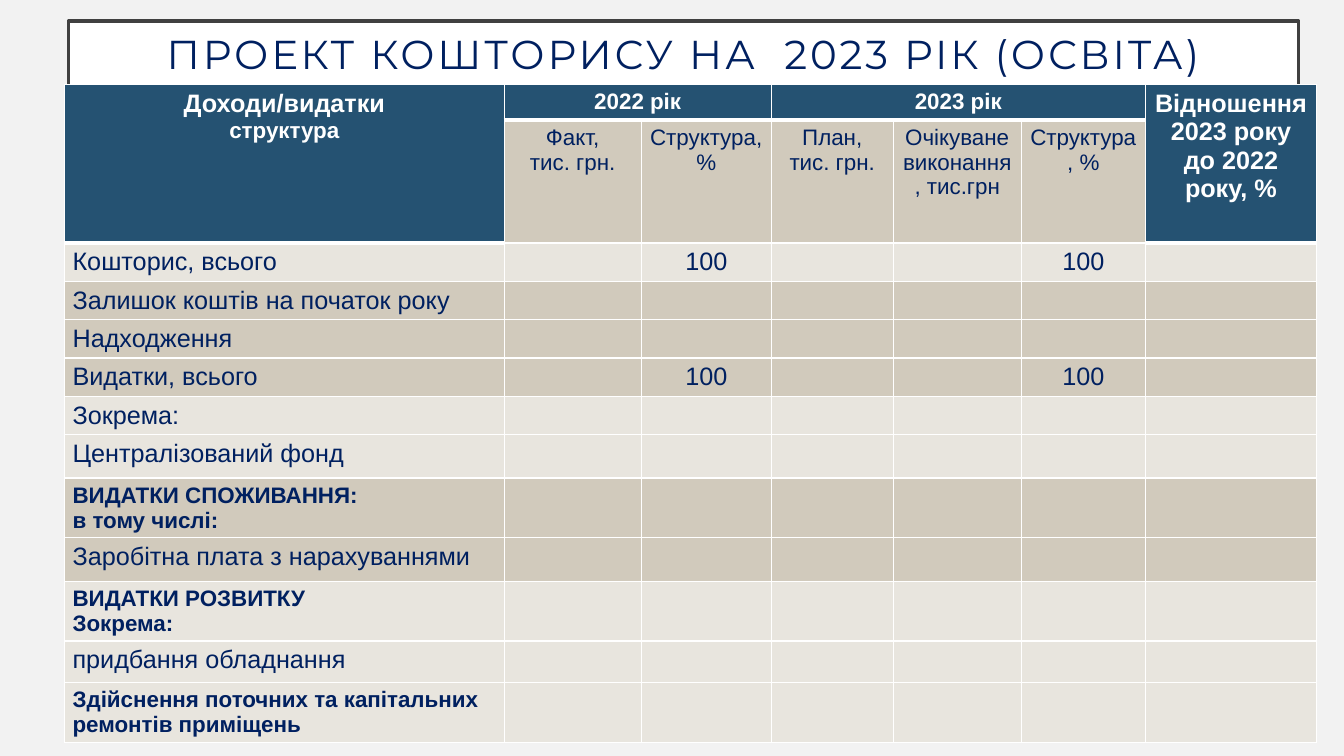
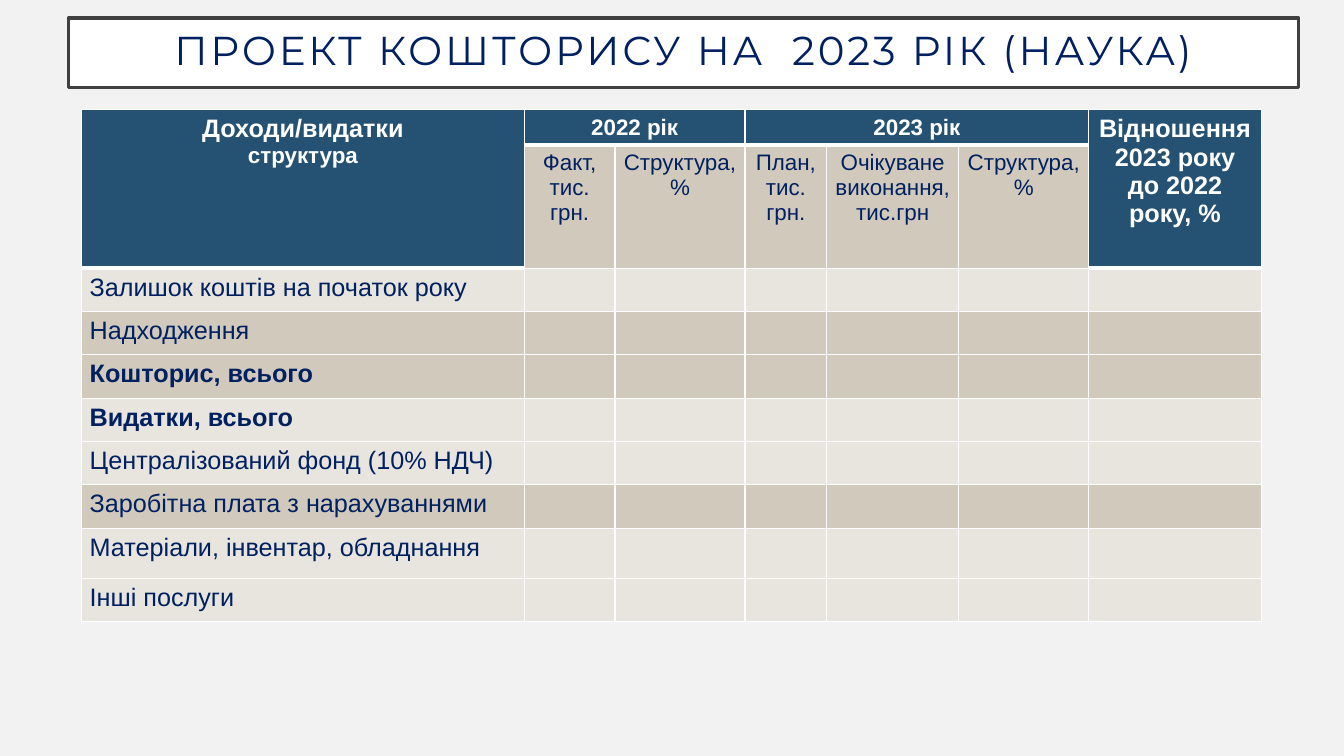
from lxml.etree import SubElement
from pptx import Presentation
from pptx.dml.color import RGBColor
from pptx.enum.text import MSO_ANCHOR, MSO_AUTO_SIZE, PP_ALIGN
from pptx.oxml.ns import qn
from pptx.util import Inches, Pt

# Shared colours and fonts
BACKGROUND = "F2F2F2"
WHITE = "FFFFFF"
FRAME = "404040"
NAVY = "002060"
HEADER = "255272"
DARK = "D1CABC"
LIGHT = "E8E5DE"
TITLE_FONT = "Montserrat"
TABLE_FONT = "Arial"

# Header wording: (row, column, last row, last column, text)
TOP_HEADINGS = [
    (0, 0, 1, 0, "Доходи/видатки\nструктура"),
    (0, 1, 0, 2, "2022 рік"),
    (0, 3, 0, 5, "2023 рік"),
    (0, 6, 1, 6, "Відношення 2023 року до 2022 року, %"),
]
HEADER_HEIGHTS = [0.35, 1.21]
LAST_COLUMN = 6

# Body rows: (label, height, fill, bold, size, share in percent)
EDUCATION_ROWS = [
    ("Кошторис, всього", 0.38, LIGHT, False, 18, "100"),
    ("Залишок коштів на початок року", 0.38, DARK, False, 18, ""),
    ("Надходження", 0.38, DARK, False, 18, ""),
    ("Видатки, всього", 0.38, DARK, False, 18, "100"),
    ("Зокрема:", 0.38, LIGHT, False, 18, ""),
    ("Централізований фонд", 0.43, LIGHT, False, 18, ""),
    ("ВИДАТКИ СПОЖИВАННЯ:\nв тому числі:", 0.59, DARK, True, 16, ""),
    ("Заробітна плата з нарахуваннями", 0.43, DARK, False, 18, ""),
    ("ВИДАТКИ РОЗВИТКУ\nЗокрема:", 0.59, LIGHT, True, 16, ""),
    ("придбання обладнання", 0.41, LIGHT, False, 18, ""),
    ("Здійснення поточних та капітальних ремонтів приміщень",
     0.6, LIGHT, True, 16, ""),
]
SCIENCE_ROWS = [
    ("Залишок коштів на початок року", 0.43, LIGHT, False, 18, ""),
    ("Надходження", 0.43, DARK, False, 18, ""),
    ("Кошторис, всього", 0.43, DARK, True, 18, ""),
    ("Видатки, всього", 0.43, LIGHT, True, 18, ""),
    ("Централізований фонд (10% НДЧ)", 0.43, LIGHT, False, 18, ""),
    ("Заробітна плата з нарахуваннями", 0.43, DARK, False, 18, ""),
    ("Матеріали, інвентар, обладнання", 0.5, LIGHT, False, 18, ""),
    ("Інші послуги", 0.43, LIGHT, False, 18, ""),
]


def color(hex_value):
    return RGBColor.from_string(hex_value)


def set_fill(target, hex_value):
    target.fill.solid()
    target.fill.fore_color.rgb = color(hex_value)


def set_font(font, name, size, hex_value, bold=False):
    font.name = name
    font.size = Pt(size)
    font.bold = bold
    font.color.rgb = color(hex_value)


def add_title(slide, text, top):
    """Place the framed title band."""
    title = slide.shapes.title
    title.left, title.top = Inches(0.68), Inches(top)
    title.width, title.height = Inches(12.2), Inches(0.69)
    set_fill(title, WHITE)
    title.line.color.rgb = color(FRAME)
    title.line.width = Pt(2.5)
    frame = title.text_frame
    frame.text = text
    frame.word_wrap = True
    frame.auto_size = MSO_AUTO_SIZE.NONE
    frame.vertical_anchor = MSO_ANCHOR.MIDDLE
    frame.margin_left = frame.margin_right = Inches(0.2)
    frame.margin_top = frame.margin_bottom = Inches(0.2)
    paragraph = frame.paragraphs[0]
    paragraph.alignment = PP_ALIGN.CENTER
    paragraph.line_spacing = 0.9
    set_font(paragraph.font, TITLE_FONT, 28.8, NAVY)
    paragraph.runs[0].font.size = Pt(28.8)
    # Letter spacing of two points
    paragraph.runs[0]._r.get_or_add_rPr().set("spc", "200")


def rule_below(row, column):
    """Width in points of the rule under a cell: thick under headings."""
    under_heading = row == 0 or (row == 1 and column in (0, LAST_COLUMN))
    return 3 if under_heading else 1


def set_borders(cell, row, column):
    properties = cell._tc.get_or_add_tcPr()
    top = rule_below(row - 1, column) if row else 1
    widths = {"lnL": 1, "lnR": 1, "lnT": top, "lnB": rule_below(row, column)}
    for side, width in widths.items():
        line = SubElement(properties, qn(f"a:{side}"), w=str(Pt(width)))
        solid = SubElement(line, qn("a:solidFill"))
        SubElement(solid, qn("a:srgbClr"), val=WHITE)


def write_cell(cell, text, size, hex_value=NAVY, bold=False, centred=True):
    cell.text_frame.text = text
    for paragraph in cell.text_frame.paragraphs:
        paragraph.alignment = PP_ALIGN.CENTER if centred else PP_ALIGN.LEFT
        set_font(paragraph.font, TABLE_FONT, size, hex_value, bold)


def format_cells(table, body_rows):
    """Give every cell its borders, fill and margins."""
    for row, table_row in enumerate(table.rows):
        for column, cell in enumerate(table_row.cells):
            set_borders(cell, row, column)
            if row >= 2:
                fill = body_rows[row - 2][2]
            elif row == 0 or column in (0, LAST_COLUMN):
                fill = HEADER
            else:
                fill = DARK
            set_fill(cell, fill)
            cell.margin_left = cell.margin_right = Inches(0.08)


def write_header(table, subheadings):
    for row, column, last_row, last_column, text in TOP_HEADINGS:
        cell = table.cell(row, column)
        cell.merge(table.cell(last_row, last_column))
        size = 18 if last_row else 16
        write_cell(cell, text, size, WHITE, bold=True)
    # The second line of the first heading is smaller
    table.cell(0, 0).text_frame.paragraphs[1].font.size = Pt(16)
    for column, text in enumerate(subheadings, start=1):
        write_cell(table.cell(1, column), text, 16)


def write_body(table, body_rows):
    for row, (label, _, _, bold, size, share) in enumerate(body_rows, start=2):
        write_cell(table.cell(row, 0), label, size, bold=bold, centred=False)
        for column in range(1, LAST_COLUMN + 1):
            text = share if column in (2, 5) else ""
            write_cell(table.cell(row, column), text, 18 if text else 12)


def add_budget_table(slide, left, top, widths, subheadings, body_rows):
    heights = HEADER_HEIGHTS + [body_row[1] for body_row in body_rows]
    table = slide.shapes.add_table(
        len(heights), len(widths), Inches(left), Inches(top),
        Inches(sum(widths)), Inches(sum(heights))).table
    table.first_row = table.horz_banding = False
    for column, width in zip(table.columns, widths):
        column.width = Inches(width)
    for row, height in zip(table.rows, heights):
        row.height = Inches(height)
    format_cells(table, body_rows)
    write_header(table, subheadings)
    write_body(table, body_rows)


def add_budget_slide(presentation, title, title_top, **table_settings):
    slide = presentation.slides.add_slide(presentation.slide_layouts[5])
    add_title(slide, title, title_top)
    add_budget_table(slide, **table_settings)


def main():
    presentation = Presentation()
    presentation.slide_width = Inches(13.33)
    presentation.slide_height = Inches(7.5)
    set_fill(presentation.slide_master.background, BACKGROUND)

    # Education budget
    add_budget_slide(
        presentation, "ПРОЕКТ КОШТОРИСУ НА  2023 РІК (ОСВІТА)", 0.21,
        left=0.64, top=0.84,
        widths=[4.36, 1.36, 1.29, 1.21, 1.27, 1.23, 1.7],
        subheadings=["Факт,\nтис. грн.", "Структура,\n%", "План, тис. грн.",
                     "Очікуване\nвиконання, тис.грн", "Структура, %"],
        body_rows=EDUCATION_ROWS)

    # Science budget
    add_budget_slide(
        presentation, "ПРОЕКТ КОШТОРИСУ НА  2023 РІК (НАУКА)", 0.18,
        left=0.81, top=1.09,
        widths=[4.39, 0.9, 1.29, 0.81, 1.31, 1.29, 1.71],
        subheadings=["Факт,\nтис. грн.", "Структура,\n%", "План, тис. грн.",
                     "Очікуване виконання, тис.грн", "Структура, %"],
        body_rows=SCIENCE_ROWS)

    presentation.save("out.pptx")


if __name__ == "__main__":
    main()
